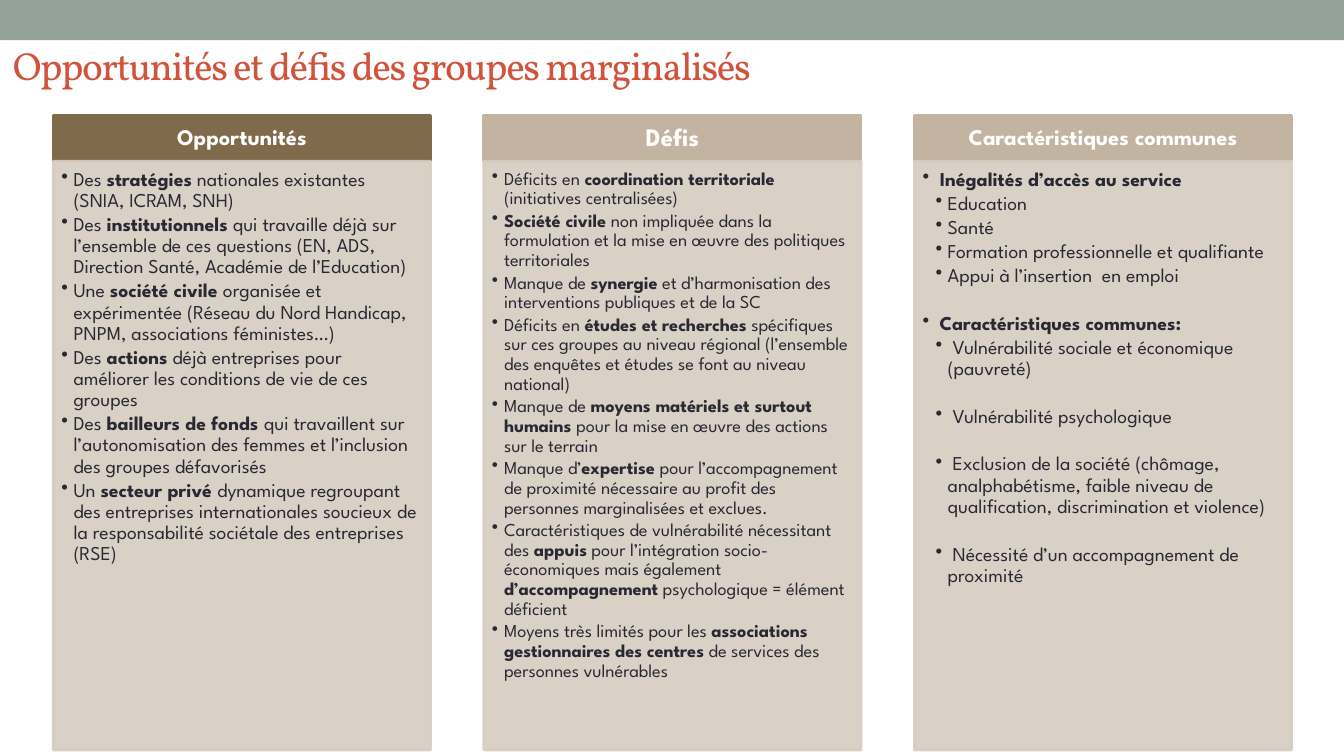
from dataclasses import dataclass

from lxml.etree import SubElement
from pptx import Presentation
from pptx.dml.color import RGBColor
from pptx.enum.shapes import MSO_SHAPE
from pptx.enum.text import MSO_ANCHOR, PP_ALIGN
from pptx.oxml.ns import qn
from pptx.util import Pt

PX = 9144  # EMU per px, 100 px to the inch

SAGE = RGBColor(0x93, 0xA2, 0x99)
RED = RGBColor(0xD2, 0x53, 0x3C)
BROWN = RGBColor(0x80, 0x6A, 0x4C)
TAN = RGBColor(0xC3, 0xB3, 0xA1)
SAND = RGBColor(0xD7, 0xCC, 0xC0)
INK = RGBColor(0x29, 0x29, 0x34)
WHITE = RGBColor(0xFF, 0xFF, 0xFF)

TITLE_FONT = "Vollkorn"
BODY_FONT = "League Spartan"

COLUMN_LEFT, COLUMN_PITCH, COLUMN_WIDTH = 53, 427, 374
HEADER_TOP, HEADER_HEIGHT = 115, 44
BODY_TOP, BODY_HEIGHT = 160, 584
BULLET_INDENT = 12
LEVEL_MARGINS = {1: 12, 2: 25}
GAP = 17  # points before a paragraph that starts a new block


@dataclass
class Column:
    heading: str
    heading_size: int
    heading_fill: RGBColor
    body_size: int
    right_inset: int
    items: list  # (level, points before, text with **bold** parts)


COLUMNS = [
    Column("Opportunités", 16, BROWN, 14, 11, [
        (1, 0, "Des **stratégies** nationales existantes (SNIA, ICRAM, SNH)"),
        (1, 0, "Des **institutionnels** qui travaille déjà sur l’ensemble de ces "
               "questions (EN, ADS, Direction Santé, Académie de l’Education)"),
        (1, 0, "Une **société civile **organisée et expérimentée (Réseau du Nord "
               "Handicap, PNPM, associations féministes…)"),
        (1, 0, "Des **actions** déjà entreprises pour améliorer les conditions "
               "de vie de ces groupes"),
        (1, 0, "Des **bailleurs de fonds **qui travaillent sur l’autonomisation "
               "des femmes et l’inclusion des groupes défavorisés"),
        (1, 0, "Un **secteur privé **dynamique regroupant des entreprises "
               "internationales soucieux de la responsabilité sociétale des "
               "entreprises (RSE)"),
    ]),
    Column("Défis", 18, TAN, 13, 10, [
        (1, 0, "Déficits en **coordination territoriale **(initiatives centralisées)"),
        (1, 0, "**Société civile **non impliquée dans la formulation et la mise "
               "en œuvre des politiques territoriales"),
        (1, 0, "Manque de **synergie** et d’harmonisation des interventions "
               "publiques et de la SC"),
        (1, 0, "Déficits en **études et recherches **spécifiques sur ces groupes "
               "au niveau régional (l’ensemble des enquêtes et études se font "
               "au niveau national)"),
        (1, 0, "Manque de **moyens matériels et surtout humains **pour la mise "
               "en œuvre des actions sur le terrain"),
        (1, 0, "Manque d’**expertise **pour l’accompagnement de proximité "
               "nécessaire au profit des personnes marginalisées et exclues."),
        (1, 0, "Caractéristiques de vulnérabilité nécessitant des **appuis** pour "
               "l’intégration socio-économiques mais également "
               "**d’accompagnement** psychologique = élément déficient"),
        (1, 0, "Moyens très limités pour les **associations gestionnaires des "
               "centres **de services des personnes vulnérables"),
    ]),
    Column("Caractéristiques communes", 16, TAN, 14, 11, [
        (1, 0, "** Inégalités d’accès au service**"),
        (2, 0, "Education"),
        (2, 0, "Santé"),
        (2, 0, "Formation professionnelle et qualifiante"),
        (2, 0, "Appui à l’insertion  en emploi"),
        (1, GAP, " **Caractéristiques communes:**"),
        (2, 0, " Vulnérabilité sociale et économique (pauvreté)"),
        (2, GAP, " Vulnérabilité psychologique"),
        (2, GAP, " Exclusion de la société (chômage, analphabétisme, faible "
                 "niveau de qualification, discrimination et violence)"),
        (2, GAP, " Nécessité d’un accompagnement de proximité"),
    ]),
]


def set_attributes(target, values):
    for name, value in values.items():
        setattr(target, name, value)


def set_frame(frame, anchor, insets):
    """Insets are left, top, right, bottom in px."""
    set_attributes(frame, {"word_wrap": True, "vertical_anchor": anchor})
    sides = ("left", "top", "right", "bottom")
    set_attributes(frame, {f"margin_{side}": inset * PX
                           for side, inset in zip(sides, insets)})


def add_run(paragraph, text, font_name, size, color, bold=False):
    run = paragraph.add_run()
    run.text = text
    set_attributes(run.font, {"name": font_name, "size": Pt(size), "bold": bold})
    run.font.color.rgb = color
    return run


def add_box(slide, left, top, width, height, color, opacity=100, outlined=True):
    shape = slide.shapes.add_shape(
        MSO_SHAPE.RECTANGLE, left * PX, top * PX, width * PX, height * PX)
    shape.shadow.inherit = False
    fills = [shape.fill]
    if outlined:
        shape.line.width = Pt(2.08)
        fills.append(shape.line.fill)
    else:
        shape.line.fill.background()
    for fill in fills:
        fill.solid()
        fill.fore_color.rgb = color
    if opacity < 100:
        for color_element in shape.element.spPr.iter(qn("a:srgbClr")):
            SubElement(color_element, qn("a:alpha"), val=str(opacity * 1000))
    return shape


def add_title(slide, text):
    box = slide.shapes.add_textbox(3 * PX, 21 * PX, 797 * PX, 87 * PX)
    set_frame(box.text_frame, MSO_ANCHOR.MIDDLE, (10, 5, 10, 5))
    run = add_run(box.text_frame.paragraphs[0], text, TITLE_FONT, 28, RED)
    run.font._element.set("spc", "-100")


def add_header(slide, left, column):
    shape = add_box(slide, left, HEADER_TOP, COLUMN_WIDTH, HEADER_HEIGHT,
                    column.heading_fill)
    set_frame(shape.text_frame, MSO_ANCHOR.MIDDLE, (12, 7, 12, 7))
    paragraph = shape.text_frame.paragraphs[0]
    set_attributes(paragraph, {"alignment": PP_ALIGN.CENTER, "line_spacing": 0.9})
    add_run(paragraph, column.heading, BODY_FONT, column.heading_size, WHITE, True)


def format_bullet(paragraph, level, space_before):
    set_attributes(paragraph, {
        "alignment": PP_ALIGN.LEFT,
        "level": level,
        "line_spacing": 0.9,
        "space_before": Pt(space_before),
        "space_after": Pt(2),
    })
    properties = paragraph._element.get_or_add_pPr()
    properties.set("marL", str(LEVEL_MARGINS[level] * PX))
    properties.set("indent", str(-BULLET_INDENT * PX))
    SubElement(properties, qn("a:buChar"), char="•")


def add_body(slide, left, column):
    shape = add_box(slide, left, BODY_TOP, COLUMN_WIDTH, BODY_HEIGHT, SAND, 90)
    frame = shape.text_frame
    set_frame(frame, MSO_ANCHOR.TOP, (8, 8, column.right_inset, 11))
    for index, (level, space_before, text) in enumerate(column.items):
        paragraph = frame.add_paragraph() if index else frame.paragraphs[0]
        format_bullet(paragraph, level, space_before)
        for position, part in enumerate(text.split("**")):
            if part:
                add_run(paragraph, part, BODY_FONT, column.body_size, INK,
                        position % 2 == 1)


def main():
    presentation = Presentation()
    set_attributes(presentation, {"slide_width": 1333 * PX, "slide_height": 750 * PX})
    slide = presentation.slides.add_slide(presentation.slide_layouts[6])
    add_box(slide, 0, 0, 1333, 40, SAGE, outlined=False)
    add_title(slide, "Opportunités et défis des groupes marginalisés")
    for index, column in enumerate(COLUMNS):
        left = COLUMN_LEFT + index * COLUMN_PITCH
        add_header(slide, left, column)
        add_body(slide, left, column)
    presentation.save("out.pptx")


if __name__ == "__main__":
    main()
